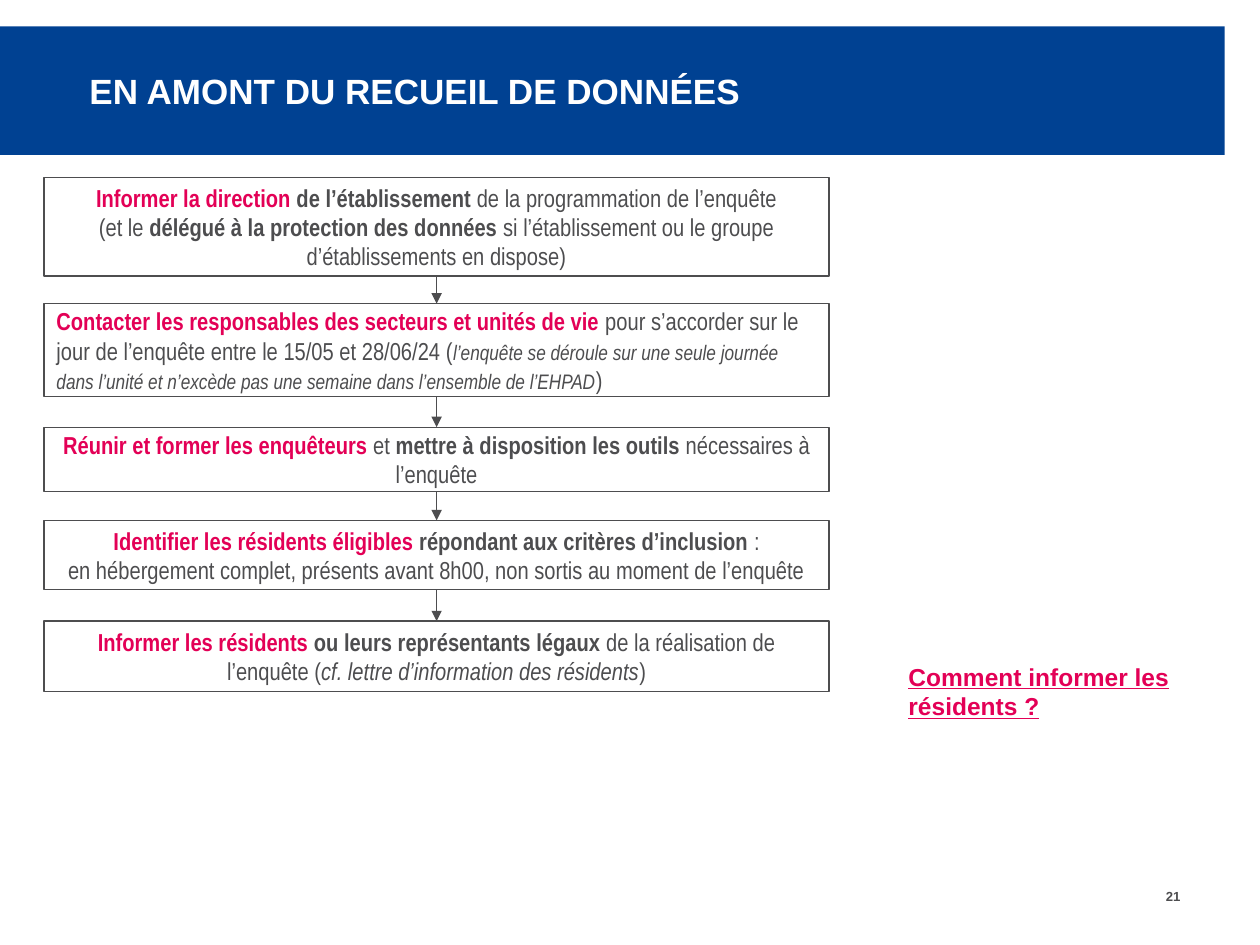
from lxml.etree import SubElement
from pptx import Presentation
from pptx.dml.color import RGBColor
from pptx.enum.shapes import MSO_CONNECTOR, MSO_SHAPE
from pptx.enum.text import MSO_ANCHOR, PP_ALIGN
from pptx.oxml.ns import qn
from pptx.util import Inches, Pt

# Content: each step is (alignment, top, height, spans); a span is (style, text)
TITLE = "EN AMONT DU RECUEIL DE DONNÉES"
QUESTION = "Comment informer les résidents ?"
PAGE_NUMBER = "21"
CENTER, LEFT, RIGHT = PP_ALIGN.CENTER, PP_ALIGN.LEFT, PP_ALIGN.RIGHT
STEPS = [
    (CENTER, 1.41, 0.78, [
        ("key", "Informer la direction "),
        ("bold", "de l’établissement "),
        ("plain", "de la programmation de l’enquête\n(et le "),
        ("bold", "délégué à la protection des données "),
        ("plain", "si l’établissement ou le groupe d’établissements en dispose)")]),
    (LEFT, 2.41, 0.74, [
        ("key", "Contacter les responsables des secteurs et unités de vie "),
        ("plain", "pour s’accorder sur le jour de l’enquête entre le 15/05 et 28/06/24 ("),
        ("aside", "l’enquête se déroule sur une seule journée dans l’unité "
                  "et n’excède pas une semaine dans l’ensemble de l’EHPAD"),
        ("plain", ")")]),
    (CENTER, 3.39, 0.51, [
        ("key", "Réunir et former les enquêteurs "),
        ("plain", "et "),
        ("bold", "mettre à disposition les outils "),
        ("plain", "nécessaires à l’enquête")]),
    (CENTER, 4.13, 0.55, [
        ("key", "Identifier les résidents éligibles "),
        ("bold", "répondant aux critères d’inclusion "),
        ("plain", ":\nen hébergement complet, présents avant 8h00, "
                  "non sortis au moment de l’enquête")]),
    (CENTER, 4.93, 0.56, [
        ("key", "Informer les résidents "),
        ("bold", "ou leurs représentants légaux "),
        ("plain", "de la réalisation de l’enquête ("),
        ("italic", "cf. lettre d’information des résidents"),
        ("plain", ")")]),
]
STEP_LEFT, STEP_WIDTH = 0.35, 6.23

# Theme: colours, line width and text styles (font, size, colour, bold, italic)
BLUE, PINK, GREY, WHITE = (RGBColor.from_string(code) for code in
                           ("004192", "E30056", "4D4D4F", "FFFFFF"))
THEME = {
    "line": Pt(0.75),
    "title": ("Arial", 20, WHITE, True, False),
    "question": ("Arial", 14, PINK, True, False),
    "number": ("Arial", 7.5, GREY, True, False),
    "key": ("Arial Narrow", 14, PINK, True, False),
    "bold": ("Arial Narrow", 14, GREY, True, False),
    "plain": ("Arial Narrow", 14, GREY, False, False),
    "italic": ("Arial Narrow", 14, GREY, False, True),
    "aside": ("Arial Narrow", 12, GREY, False, True),
}


def style_font(font, style):
    font.name, size, font.color.rgb, font.bold, font.italic = THEME[style]
    font.size = Pt(size)


def add_box(page, area, fill=None, line=None):
    box = page.shapes.add_shape(MSO_SHAPE.RECTANGLE, *map(Inches, area))
    box.shadow.inherit = False
    if fill is None:
        box.fill.background()
    else:
        box.fill.solid()
        box.fill.fore_color.rgb = fill
    if line is None:
        box.line.fill.background()
    else:
        box.line.color.rgb = line
        box.line.width = THEME["line"]
    return box


def write_label(box, text, style, align, anchor, margins, wrap=True):
    frame = box.text_frame
    frame.text = text
    frame.word_wrap = wrap
    frame.vertical_anchor = anchor
    frame.margin_left = frame.margin_right = Inches(margins[0])
    frame.margin_top = frame.margin_bottom = Inches(margins[1])
    para = frame.paragraphs[0]
    para.alignment = align
    span = para.runs[0]
    style_font(span.font, style)
    return span


def write_spans(box, spans, align):
    frame = box.text_frame
    frame.word_wrap = True
    frame.vertical_anchor = MSO_ANCHOR.MIDDLE
    para = frame.paragraphs[0]
    para.alignment = align
    for style, text in spans:
        for index, part in enumerate(text.split("\n")):
            if index:
                para.add_line_break()
            span = para.add_run()
            span.text = part
            style_font(span.font, style)


def add_arrow(page, upper, lower):
    arrow = page.shapes.add_connector(MSO_CONNECTOR.STRAIGHT, 0, 0, 0, 0)
    arrow.begin_connect(upper, 2)
    arrow.end_connect(lower, 0)
    arrow.line.color.rgb = GREY
    arrow.line.width = THEME["line"]
    SubElement(arrow.line._get_or_add_ln(), qn("a:tailEnd"), type="triangle")
    SubElement(arrow._element.spPr, qn("a:effectLst"))


def main():
    deck = Presentation()
    deck.slide_width, deck.slide_height = Inches(10), Inches(7.5)
    page = deck.slides.add_slide(deck.slide_layouts[6])

    # Title band and page number
    add_box(page, (0, 0.21, 9.72, 1.02), fill=BLUE)
    title = page.shapes.add_textbox(*map(Inches, (0.67, 0.21, 7.4, 1.02)))
    write_label(title, TITLE, "title", LEFT, MSO_ANCHOR.MIDDLE, (0.04, 0))
    number = page.shapes.add_textbox(*map(Inches, (9.14, 7.05, 0.27, 0.13)))
    write_label(number, PAGE_NUMBER, "number", RIGHT, MSO_ANCHOR.TOP, (0.04, 0), wrap=False)

    # Chain of steps
    boxes = []
    for align, top, height, spans in STEPS:
        box = add_box(page, (STEP_LEFT, top, STEP_WIDTH, height), line=GREY)
        write_spans(box, spans, align)
        boxes.append(box)
    for upper, lower in zip(boxes, boxes[1:]):
        add_arrow(page, upper, lower)

    # Question beside the last step
    question = add_box(page, (7.13, 5.13, 2.28, 0.71), fill=WHITE)
    span = write_label(question, QUESTION, "question", LEFT, MSO_ANCHOR.TOP, (0.08, 0.12))
    span.font.underline = True

    deck.save("out.pptx")


if __name__ == "__main__":
    main()
